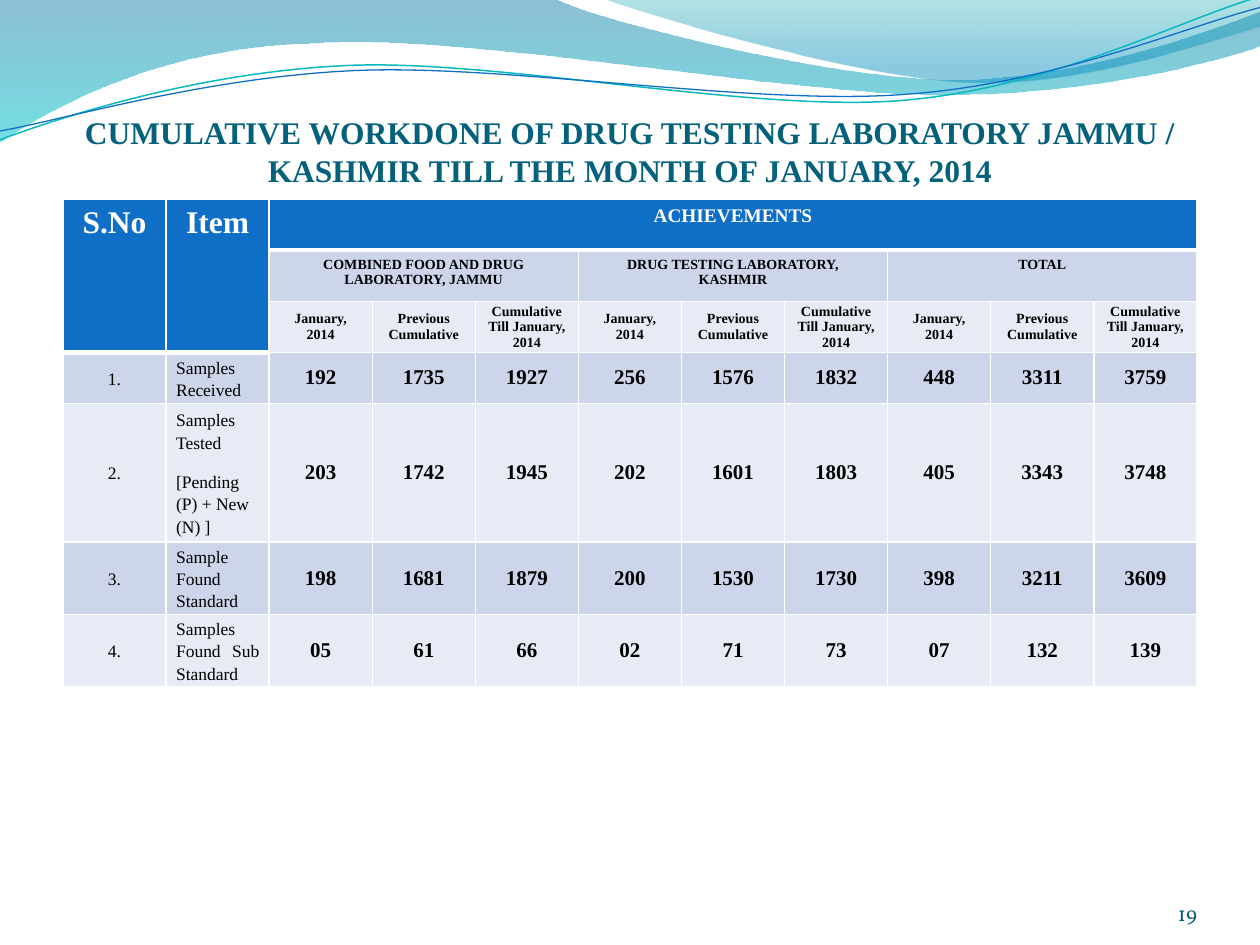
from lxml import etree
from pptx import Presentation
from pptx.dml.color import RGBColor
from pptx.enum.text import MSO_ANCHOR, PP_ALIGN
from pptx.oxml.ns import qn
from pptx.util import Inches, Pt

CENTER, LEFT, RIGHT, JUSTIFY = PP_ALIGN.CENTER, PP_ALIGN.LEFT, PP_ALIGN.RIGHT, PP_ALIGN.JUSTIFY
MIDDLE, BOTTOM = MSO_ANCHOR.MIDDLE, MSO_ANCHOR.BOTTOM

WHITE = RGBColor(0xFF, 0xFF, 0xFF)
BLACK = RGBColor(0x00, 0x00, 0x00)
BLUE = RGBColor(0x0F, 0x6F, 0xC6)
TEAL = RGBColor(0x0A, 0xB8, 0xBF)
TITLE_BLUE = RGBColor(0x04, 0x61, 0x7B)
NUMBER_BLUE = RGBColor(0x04, 0x5D, 0x75)
BAND_DARK = RGBColor(0xCC, 0xD5, 0xEA)
BAND_LIGHT = RGBColor(0xE7, 0xEB, 0xF5)
WAVE_BLUE = RGBColor(0x00, 0x74, 0xA1)
WAVE_CYAN = RGBColor(0x00, 0xC6, 0xCF)
CREST_GREEN = RGBColor(0x00, 0xA1, 0xA9)
CREST_BLUE = RGBColor(0x00, 0x8B, 0xBF)

SERIF = "Times New Roman"

WAVE = [(0, 0), (4.4, -0.01), (4.76, 0.17, 6.64, 0.63, 7.58, 0.63),
        (8.53, 0.63, 9.58, 0.26, 10, 0.09), (10.01, 0.36),
        (9.83, 0.44, 8.7, 0.76, 7.46, 0.75), (6.22, 0.75, 3.82, 0.28, 2.57, 0.34),
        (1.29, 0.36, 0.46, 0.83, -0.01, 1.13)]
CREST = [(4.79, -0.01), (5.09, 0.11, 6.82, 0.62, 7.69, 0.65),
         (8.56, 0.69, 9.61, 0.32, 10, 0.21), (10, 0)]
TEAL_LINE = [(0, 1.11), (0.48, 0.93, 1.58, 0.57, 2.77, 0.52),
             (3.95, 0.47, 5.93, 0.89, 7.13, 0.8), (8.33, 0.71, 9.38, 0.15, 9.98, -0.02)]
BLUE_LINE = [(0, 1.04), (0.47, 0.96, 1.64, 0.61, 2.83, 0.56),
             (4.03, 0.51, 5.97, 0.84, 7.17, 0.75), (8.36, 0.67, 9.41, 0.21, 10, 0.06)]

TITLE = ("CUMULATIVE WORKDONE OF DRUG TESTING LABORATORY JAMMU / "
         "KASHMIR TILL THE MONTH OF JANUARY, 2014")
LABORATORIES = ["COMBINED FOOD AND DRUG LABORATORY, JAMMU",
                "DRUG TESTING LABORATORY, KASHMIR", "TOTAL"]
PERIODS = ["January, 2014", "Previous Cumulative", "Cumulative Till January, 2014"]
RESULTS = [
    (["Samples Received"], LEFT,
     ["192", "1735", "1927", "256", "1576", "1832", "448", "3311", "3759"]),
    (["Samples Tested", "[Pending (P) + New (N) ]"], LEFT,
     ["203", "1742", "1945", "202", "1601", "1803", "405", "3343", "3748"]),
    (["Sample Found Standard"], LEFT,
     ["198", "1681", "1879", "200", "1530", "1730", "398", "3211", "3609"]),
    (["Samples Found Sub Standard"], JUSTIFY,
     ["05", "61", "66", "02", "71", "73", "07", "132", "139"]),
]


def add_outline(page, segments, close):
    """Add a freeform of straight (x, y) and cubic (x1, y1, x2, y2, x, y) segments."""
    points = [(Inches(segment[-2]), Inches(segment[-1])) for segment in segments]
    builder = page.shapes.build_freeform(*points[0])
    builder.add_line_segments(points[1:], close=close)
    shape = builder.convert_to_shape()
    shape.shadow.inherit = False
    straight = list(shape.element.spPr.iter(qn("a:lnTo")))
    for step, segment in zip(straight, segments[1:]):
        if len(segment) == 6:
            step.tag = qn("a:cubicBezTo")
            for index, start in enumerate((0, 2)):
                control = etree.Element(qn("a:pt"),
                                        x=str(Inches(segment[start]) - shape.left),
                                        y=str(Inches(segment[start + 1]) - shape.top))
                step.insert(index, control)
    return shape


def add_wave(page, segments, stops):
    """Add a wave filled from top to bottom with (position, colour, opacity) stops."""
    shape = add_outline(page, segments, True)
    shape.line.fill.background()
    gradient = etree.Element(qn("a:gradFill"), rotWithShape="1")
    stop_list = etree.SubElement(gradient, qn("a:gsLst"))
    for position, color, opacity in stops:
        stop = etree.SubElement(stop_list, qn("a:gs"), pos=str(position * 1000))
        tint = etree.SubElement(stop, qn("a:srgbClr"), val=str(color))
        etree.SubElement(tint, qn("a:alpha"), val=str(opacity * 1000))
    etree.SubElement(gradient, qn("a:lin"), ang="5400000", scaled="0")
    shape.element.spPr.find(qn("a:custGeom")).addnext(gradient)


def add_banner(page):
    """Draw the waves and thin lines along the top edge."""
    add_wave(page, WAVE, [(0, WAVE_BLUE, 45), (100, WAVE_CYAN, 55)])
    add_wave(page, CREST, [(0, CREST_GREEN, 30), (80, CREST_BLUE, 45)])
    for segments, color, width in ((TEAL_LINE, TEAL, 0.85), (BLUE_LINE, BLUE, 0.75)):
        line = add_outline(page, segments, False)
        line.fill.background()
        line.line.color.rgb = color
        line.line.width = Pt(width)


def write(frame, texts, size, color, bold=True, align=CENTER, font=SERIF):
    """Write one paragraph per text and return the paragraphs."""
    frame.text = "\n".join(texts)
    for para in frame.paragraphs:
        para.alignment = align
        para.font.name = font
        para.font.size = Pt(size)
        para.font.bold = bold
        para.font.color.rgb = color
    return frame.paragraphs


def add_label(page, left, top, width, height, text, size, color, **style):
    """Add a bottom-anchored text box without insets."""
    box = page.shapes.add_textbox(left, top, width, height)
    frame = box.text_frame
    frame.word_wrap = True
    frame.vertical_anchor = BOTTOM
    frame.margin_left = frame.margin_right = frame.margin_top = frame.margin_bottom = 0
    write(frame, [text], size, color, **style)


def set_borders(cell, top, bottom):
    """Give a cell white borders, with the top and bottom widths in points."""
    properties = cell._tc.get_or_add_tcPr()
    for index, (side, width) in enumerate(
            (("lnL", 1), ("lnR", 1), ("lnT", top), ("lnB", bottom))):
        border = etree.Element(qn(f"a:{side}"), w=str(Pt(width)))
        fill = etree.SubElement(border, qn("a:solidFill"))
        etree.SubElement(fill, qn("a:srgbClr"), val=str(WHITE))
        properties.insert(index, border)


def style_cells(table):
    """Fill every cell by its band, set its insets and draw its borders."""
    for row in range(len(table.rows)):
        for column in range(len(table.columns)):
            cell = table.cell(row, column)
            header_end = 2 if column < 2 else 0
            band = BAND_DARK if row % 2 else BAND_LIGHT
            cell.fill.solid()
            cell.fill.fore_color.rgb = BLUE if row <= header_end else band
            set_borders(cell, 3 if row == header_end + 1 else 1,
                        3 if row == header_end else 1)
            if row >= 2 and not cell.is_spanned:
                cell.vertical_anchor = MIDDLE
                cell.margin_left = cell.margin_right = Inches(0.08)
                cell.margin_top = cell.margin_bottom = 0


def fill_header(table):
    """Merge and label the three header rows."""
    for column, text in enumerate(["S.No", "Item"]):
        table.cell(0, column).merge(table.cell(2, column))
        write(table.cell(0, column).text_frame, [text], 18, WHITE)
    table.cell(0, 2).merge(table.cell(0, 10))
    write(table.cell(0, 2).text_frame, ["ACHIEVEMENTS"], 11, WHITE)
    for group, laboratory in enumerate(LABORATORIES):
        first = 2 + group * len(PERIODS)
        table.cell(1, first).merge(table.cell(1, first + 2))
        write(table.cell(1, first).text_frame, [laboratory], 8, BLACK)
        for offset, period in enumerate(PERIODS):
            write(table.cell(2, first + offset).text_frame, [period], 8, BLACK)


def fill_results(table):
    """Write the numbered items and their values."""
    for number, (item, item_align, values) in enumerate(RESULTS, 1):
        row = number + 2
        labels = (([f"{number}."], CENTER), (item, item_align))
        for column, (texts, align) in enumerate(labels):
            for para in write(table.cell(row, column).text_frame, texts, 10, BLACK,
                              bold=False, align=align):
                para.line_spacing = 1.15
                para.space_after = Pt(10)
        for column, value in enumerate(values, 2):
            write(table.cell(row, column).text_frame, [value], 12, BLACK)


def add_results_table(page, left, top, width, height, rows_height):
    """Build the table of work done, whose rows grow from rows_height to fit."""
    rows, columns = 3 + len(RESULTS), 2 + len(LABORATORIES) * len(PERIODS)
    frame = page.shapes.add_table(rows, columns, left, top, width, rows_height)
    table = frame.table
    table.first_row = table.horz_banding = False
    fill_header(table)
    fill_results(table)
    style_cells(table)
    frame.height = height


def main():
    """Build the slide and save the deck."""
    deck = Presentation()
    deck.slide_width, deck.slide_height = Inches(10), Inches(7.5)
    page = deck.slides.add_slide(deck.slide_layouts[6])
    add_banner(page)
    add_label(page, Inches(0.5), Inches(0.77), Inches(9), Inches(0.73),
              TITLE, 18, TITLE_BLUE)
    add_results_table(page, Inches(0.5), Inches(1.58), Inches(9), Inches(3.89),
                      Inches(2.84))
    add_label(page, Inches(8.67), Inches(6.95), Inches(0.83), Inches(0.4),
              "19", 12, NUMBER_BLUE, bold=False, align=RIGHT, font="Vollkorn")
    deck.save("out.pptx")


if __name__ == "__main__":
    main()
